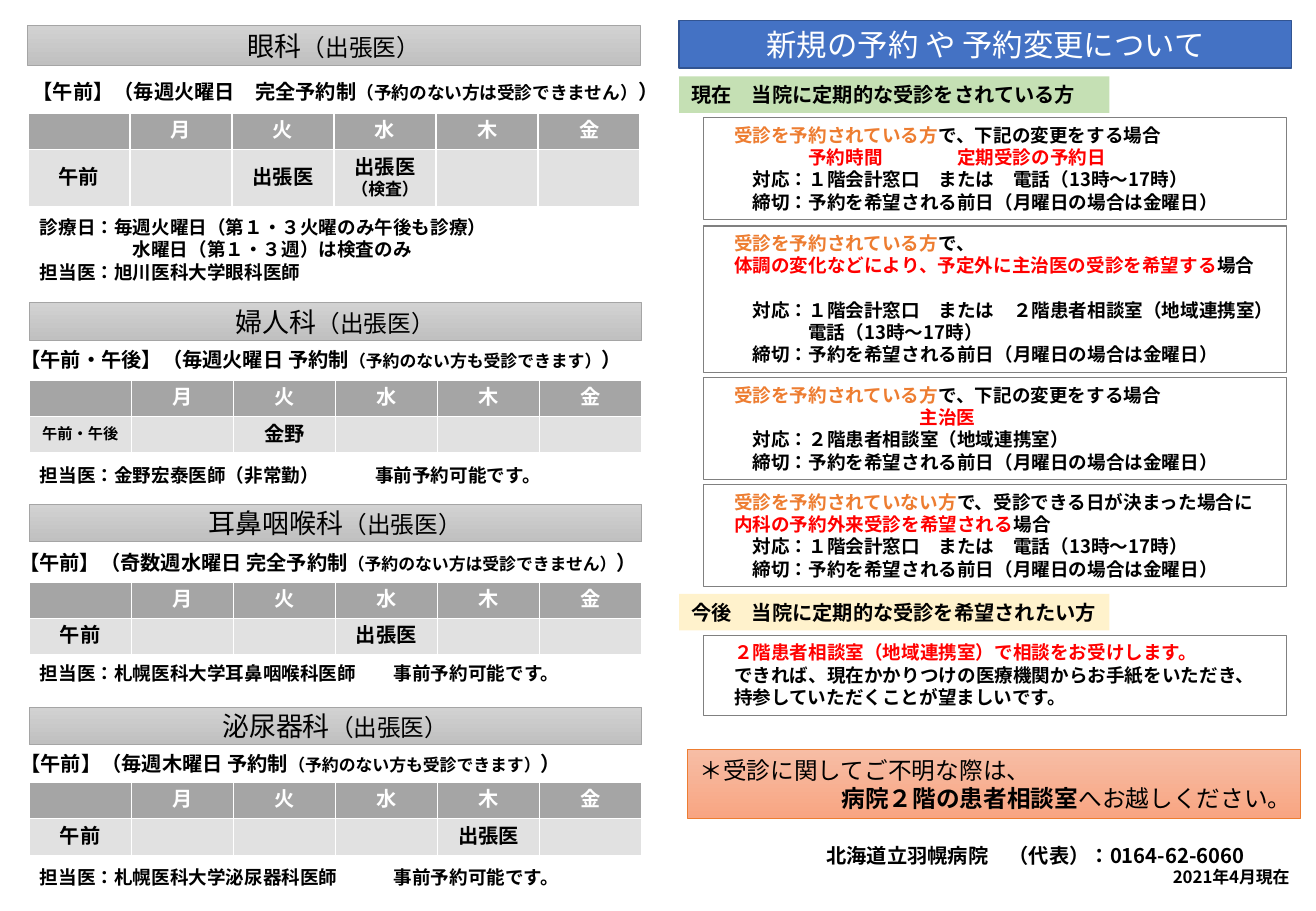
from lxml import etree
from pptx import Presentation
from pptx import util as u
from pptx.dml.color import RGBColor
from pptx.enum import lang, shapes, text
from pptx.oxml import ns

COLUMNS, ROWS = 1083, 750
CELL = u.Inches(0.01)
FONT = "Noto Sans CJK JP"
LINE_RATIO = 1.2
GAP = "　"
LEFT, CENTER, RIGHT = text.PP_ALIGN.LEFT, text.PP_ALIGN.CENTER, text.PP_ALIGN.RIGHT

BLACK = RGBColor(0x00, 0x00, 0x00)
WHITE = RGBColor(0xFF, 0xFF, 0xFF)
RED = RGBColor(0xFF, 0x00, 0x00)
ORANGE = RGBColor(0xED, 0x7D, 0x31)
BLUE = RGBColor(0x44, 0x72, 0xC4)
NAVY = RGBColor(0x32, 0x54, 0x91)
GREEN = RGBColor(0xC5, 0xE0, 0xB4)
CREAM = RGBColor(0xFF, 0xF2, 0xCC)
FRAME_GRAY = RGBColor(0x80, 0x80, 0x80)
HEADER_GRAY = RGBColor(0xA5, 0xA5, 0xA5)
BODY_GRAY = RGBColor(0xE1, 0xE1, 0xE1)
SILVER = (RGBColor(0xD2, 0xD2, 0xD2), RGBColor(0xC0, 0xC0, 0xC0))
SALMON = (RGBColor(0xF7, 0xBD, 0xA5), RGBColor(0xF8, 0xA5, 0x82))

WEEKDAYS = ["", "月", "火", "水", "木", "金"]
CLOSED = "（予約のない方は受診できません）"
OPEN = "（予約のない方も受診できます）"
BOOKABLE = "事前予約可能です。"
DEADLINE = (2, [("締切：予約を希望される前日（月曜日の場合は金曜日）",)])
DESK = (2, [("対応：１階会計窓口　または　電話（13時〜17時）",)])
CHANGE = (1, [("受診を予約されている方", ORANGE), ("で、下記の変更をする場合",)])

DEPARTMENTS = [
    dict(name="眼科", box=(23, 21, 504, 33), heading=(17, 60), table_top=93, note_top=173,
         hours="【午前】（毎週火曜日　完全予約制", remark=CLOSED, remark_size=10.5,
         period=("午前", 12), visits={2: ["出張医"], 3: ["出張医", "（検査）"]}, body_height=47,
         notes=[(0, ["診療日：毎週火曜日（第１・３火曜のみ午後も診療）"]),
                (5, ["水曜日（第１・３週）は検査のみ"]), (0, ["担当医：旭川医科大学眼科医師"])]),
    dict(name="婦人科", box=(24, 249, 504, 31), heading=(7, 281), table_top=313, note_top=377,
         hours="【午前・午後】（毎週火曜日 予約制", remark=OPEN, remark_size=10,
         period=("午前・午後", 9), visits={2: ["金野"]}, body_height=30,
         notes=[(0, ["担当医：金野宏泰医師（非常勤）", GAP, BOOKABLE])], gap=3),
    dict(name="耳鼻咽喉科", box=(24, 415, 504, 31), heading=(6, 448), table_top=479, note_top=540,
         hours="【午前】（奇数週水曜日 完全予約制", remark=CLOSED, remark_size=10,
         period=("午前", 12), visits={3: ["出張医"]}, body_height=30,
         notes=[(0, ["担当医：札幌医科大学耳鼻咽喉科医師", GAP, BOOKABLE])], gap=2),
    dict(name="泌尿器科", box=(24, 582, 504, 31), heading=(7, 614), table_top=644, note_top=708,
         hours="【午前】（毎週木曜日 予約制", remark=OPEN, remark_size=10,
         period=("午前", 12), visits={4: ["出張医"]}, body_height=30,
         notes=[(0, ["担当医：札幌医科大学泌尿器科医師", GAP, BOOKABLE])], gap=3),
]

CASES = [
    (97, 84, [CHANGE, (5, [("予約時間", RED), (GAP,), ("定期受診の予約日", RED)]), DESK, DEADLINE]),
    (186, 121, [(1, [("受診を予約されている方", ORANGE), ("で、",)]),
                (1, [("体調の変化などにより、予定外に主治医の受診を希望する", RED), ("場合",)]),
                (2, [("対応：１階会計窓口　または　２階患者相談室（地域連携室）",)], 1),
                (5, [("電話（13時〜17時）",)]), DEADLINE]),
    (311, 84, [CHANGE, (11, [("主治医", RED)]),
               (2, [("対応：２階患者相談室（地域連携室）",)]), DEADLINE]),
    (399, 84, [(1, [("受診を予約されていない方", ORANGE), ("で、受診できる日が決まった場合に",)]),
               (1, [("内科の予約外来受診を希望される", RED), ("場合",)]), DESK, DEADLINE]),
    (523, 66, [(1, [("２階患者相談室（地域連携室）で相談をお受けします。", RED)]),
               (1, [("できれば、現在かかりつけの医療機関からお手紙をいただき、",)]),
               (1, [("持参していただくことが望ましいです。",)])]),
]


def write_paragraph(paragraph, runs, size, align=LEFT, indent=0, lines_before=0, gap=1):
    paragraph.alignment = align
    paragraph.line_spacing = u.Pt(size * LINE_RATIO)
    paragraph.space_before = u.Pt(lines_before * size * LINE_RATIO)
    properties = paragraph._p.get_or_add_pPr()
    properties.set("marL", str(u.Pt(indent * size)))
    properties.set("indent", "0")
    for words, color, run_size, bold in runs:
        run = paragraph.add_run()
        run.text = words
        run.font.name = FONT
        run.font.size = u.Pt(run_size)
        run.font.bold = bold
        run.font.color.rgb = color
        run.font.language_id = lang.MSO_LANGUAGE_ID.JAPANESE
        run_properties = run._r.get_or_add_rPr()
        etree.SubElement(run_properties, ns.qn("a:ea"), typeface=FONT)
        if words == GAP:
            run_properties.set("spc", str((gap - 1) * size * 100))
    if not runs:
        etree.SubElement(paragraph._p, ns.qn("a:endParaRPr"), sz=str(size * 100))


def next_paragraph(frame, index):
    return frame.paragraphs[0] if index == 0 else frame.add_paragraph()


def add_panel(slide, box, fill=None, line=None, width=0.5, anchor=text.MSO_ANCHOR.MIDDLE):
    panel = slide.shapes.add_shape(shapes.MSO_SHAPE.RECTANGLE, *(CELL * part for part in box))
    panel.shadow.inherit = False
    if fill is None:
        panel.fill.background()
    elif isinstance(fill, RGBColor):
        panel.fill.solid()
        panel.fill.fore_color.rgb = fill
    else:
        panel.fill.gradient()
        panel.fill.gradient_angle = 270
        for stop, color in zip(panel.fill.gradient_stops, fill):
            stop.color.rgb = color
    if line is None:
        panel.line.fill.background()
    else:
        panel.line.color.rgb = line
        panel.line.width = u.Pt(width)
    panel.text_frame.word_wrap = True
    panel.text_frame.vertical_anchor = anchor
    return panel.text_frame


def add_label(slide, box):
    frame = slide.shapes.add_textbox(*(CELL * part for part in box)).text_frame
    frame.word_wrap = True
    return frame


def style_cell(cell, fill):
    cell.fill.solid()
    cell.fill.fore_color.rgb = fill
    cell.vertical_anchor = text.MSO_ANCHOR.MIDDLE
    properties = cell._tc.get_or_add_tcPr()
    for position, side in enumerate(("lnL", "lnR", "lnT", "lnB")):
        border = etree.Element(ns.qn("a:" + side), w=str(u.Pt(1)))
        solid = etree.SubElement(border, ns.qn("a:solidFill"))
        etree.SubElement(solid, ns.qn("a:srgbClr"), val=str(WHITE))
        properties.insert(position, border)


def add_schedule(slide, box, department):
    left, top, width, height = (CELL * part for part in box)
    table = slide.shapes.add_table(2, len(WEEKDAYS), left, top, width, height).table
    table.rows[0].height = CELL * 30
    table.rows[1].height = CELL * department["body_height"]
    period, period_size = department["period"]
    for column, weekday in enumerate(WEEKDAYS):
        visits = [period] if column == 0 else department["visits"].get(column, [""])
        for row, (entries, fill, color) in enumerate(
                [([weekday], HEADER_GRAY, WHITE), (visits, BODY_GRAY, BLACK)]):
            cell = table.cell(row, column)
            style_cell(cell, fill)
            for index, entry in enumerate(entries):
                size = 10 if index else period_size if row and column == 0 else 12
                runs = [(entry, color, size, True)] if entry else []
                write_paragraph(next_paragraph(cell.text_frame, index), runs, size, CENTER)


def add_department(slide, department):
    left, top, width, height = department["box"]
    title = add_panel(slide, department["box"], SILVER, HEADER_GRAY)
    write_paragraph(title.paragraphs[0], [(department["name"], BLACK, 16, False),
                                          ("（出張医）", BLACK, 14, False)], 16, CENTER)
    heading = add_label(slide, (*department["heading"], 542, 30))
    write_paragraph(heading.paragraphs[0], [
        (department["hours"], BLACK, 12, True),
        (department["remark"], BLACK, department["remark_size"], True),
        ("）", BLACK, 12, True)], 12)
    add_schedule(slide, (left, department["table_top"], width, 30 + department["body_height"]),
                 department)
    notes = add_label(slide, (23, department["note_top"], width, 29))
    for index, (indent, parts) in enumerate(department["notes"]):
        runs = [(words, BLACK, 11, True) for words in parts]
        write_paragraph(next_paragraph(notes, index), runs, 11, indent=indent,
                        gap=department.get("gap", 1))


def add_case(slide, box, lines):
    frame = add_panel(slide, box, line=FRAME_GRAY, width=0.75, anchor=text.MSO_ANCHOR.TOP)
    for index, (indent, parts, *lines_before) in enumerate(lines):
        runs = [(words, color[0] if color else BLACK, 11, True) for words, *color in parts]
        write_paragraph(next_paragraph(frame, index), runs, 11, indent=indent,
                        lines_before=sum(lines_before), gap=4)


def add_booking_guide(slide, left, width):
    title = add_panel(slide, (left, 17, width, 39), BLUE, NAVY, 1)
    write_paragraph(title.paragraphs[0], [("新規の予約 や 予約変更について", WHITE, 18, False)], 18, CENTER)
    for top, fill, words in [(63, GREEN, "現在　当院に定期的な受診をされている方"),
                             (489, CREAM, "今後　当院に定期的な受診を希望されたい方")]:
        frame = add_panel(slide, (left, top, 354, 30), fill)
        write_paragraph(frame.paragraphs[0], [(words, BLACK, 12, True)], 12)
    for top, height, lines in CASES:
        add_case(slide, (left + 20, top, 480, height), lines)
    help_frame = add_panel(slide, (left + 7, 617, width, 57), SALMON, ORANGE)
    write_paragraph(help_frame.paragraphs[0], [("＊受診に関してご不明な際は、", BLACK, 14, False)], 14)
    write_paragraph(help_frame.add_paragraph(), [("病院２階の患者相談室", BLACK, 14, True),
                                                 ("へお越しください。", BLACK, 14, False)], 14, indent=6)
    for top, right, size, words in [(689, 1034, 12, "北海道立羽幌病院　（代表）：0164-62-6060"),
                                    (709, 1071, 10, "2021年4月現在")]:
        frame = add_label(slide, (left, top, right - left, 27))
        write_paragraph(frame.paragraphs[0], [(words, BLACK, size, True)], size, RIGHT)


def main():
    presentation = Presentation()
    presentation.slide_width = CELL * COLUMNS
    presentation.slide_height = CELL * ROWS
    slide = presentation.slides.add_slide(presentation.slide_layouts[6])
    for department in DEPARTMENTS:
        add_department(slide, department)
    add_booking_guide(slide, 559, 504)
    presentation.save("out.pptx")


if __name__ == "__main__":
    main()
